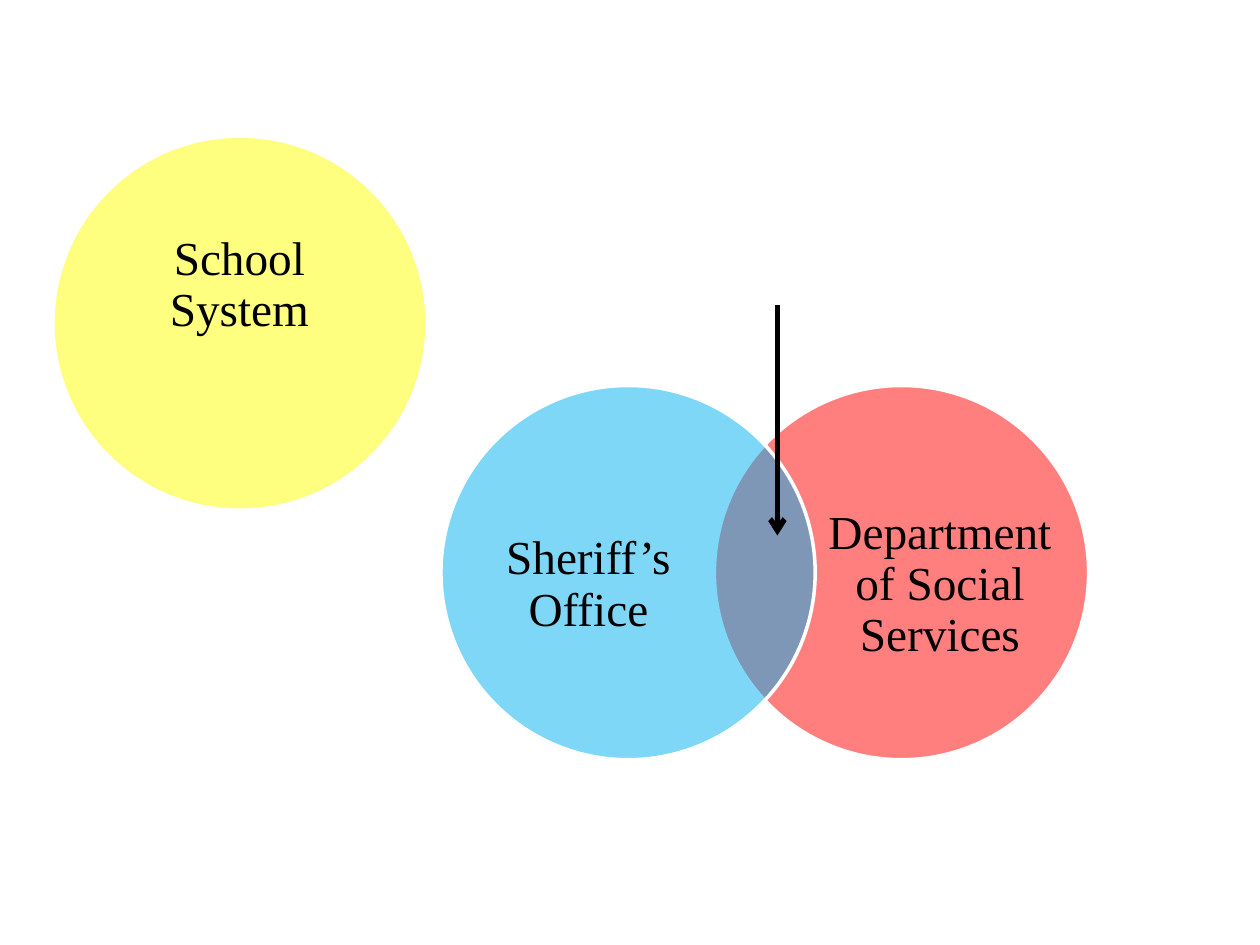
import lxml.etree
import pptx
import pptx.util
import pptx.dml.color
import pptx.enum.shapes
import pptx.enum.text
import pptx.oxml.ns

Inches = pptx.util.Inches
Pt = pptx.util.Pt
qn = pptx.oxml.ns.qn

COLORS = {
    "school": "FFFF00",
    "social": "FF0000",
    "sheriff": "00B0F0",
    "outline": "FFFFFF",
    "ink": "000000",
}
FONT = "Times New Roman"
DIAMETER = 2.97


def rgb(name):
    return pptx.dml.color.RGBColor.from_string(COLORS[name])


def add_circle(shapes, left, top, color):
    sp = shapes.add_shape(
        pptx.enum.shapes.MSO_SHAPE.OVAL,
        Inches(left), Inches(top), Inches(DIAMETER), Inches(DIAMETER))
    sp.shadow.inherit = False
    sp.fill.solid()
    sp.fill.fore_color.rgb = rgb(color)
    fill_color = sp._element.spPr.find(qn("a:solidFill"))[0]
    lxml.etree.SubElement(fill_color, qn("a:alpha"), val="50000")
    sp.line.color.rgb = rgb("outline")
    sp.line.width = Pt(2)


def add_label(shapes, box, text):
    tf = shapes.add_textbox(*map(Inches, box)).text_frame
    tf.word_wrap = True
    tf.vertical_anchor = pptx.enum.text.MSO_ANCHOR.MIDDLE
    tf.margin_left = tf.margin_top = tf.margin_right = tf.margin_bottom = 0
    p = tf.paragraphs[0]
    p.text = text
    p.alignment = pptx.enum.text.PP_ALIGN.CENTER
    p.line_spacing = 0.9
    p.font.name = FONT
    p.font.size = Pt(27)
    p.font.color.rgb = rgb("ink")


def add_venn(s, left, top):
    shapes = s.shapes.add_group_shape().shapes
    agencies = [
        ("school", 0, 0, (0.39, 0.52, 2.18, 1.34), "School System"),
        ("social", 5.25, 1.98, (0.9, 0.77, 1.78, 1.63),
         "Department of Social Services"),
        ("sheriff", 3.08, 1.98, (0.28, 0.77, 1.78, 1.63), "Sheriff’s Office"),
    ]
    for color, dx, dy, (x, y, w, h), text in agencies:
        cx, cy = left + dx, top + dy
        add_circle(shapes, cx, cy, color)
        add_label(shapes, (cx + x, cy + y, w, h), text)


def add_overlap_arrow(s, x, top, bottom):
    cn = s.shapes.add_connector(
        pptx.enum.shapes.MSO_CONNECTOR.STRAIGHT,
        Inches(x), Inches(top), Inches(x), Inches(bottom))
    cn.line.color.rgb = rgb("ink")
    cn.line.width = Pt(3)
    spPr = cn._element.spPr
    lxml.etree.SubElement(spPr.find(qn("a:ln")), qn("a:tailEnd"), type="arrow")
    lxml.etree.SubElement(spPr, qn("a:effectLst"))


def main():
    prs = pptx.Presentation()
    prs.slide_width = Inches(10)
    prs.slide_height = Inches(7.5)
    s = prs.slides.add_slide(prs.slide_layouts[6])
    add_venn(s, 0.42, 1.08)
    add_overlap_arrow(s, 6.17, 2.42, 4.25)
    prs.save("out.pptx")


if __name__ == "__main__":
    main()
